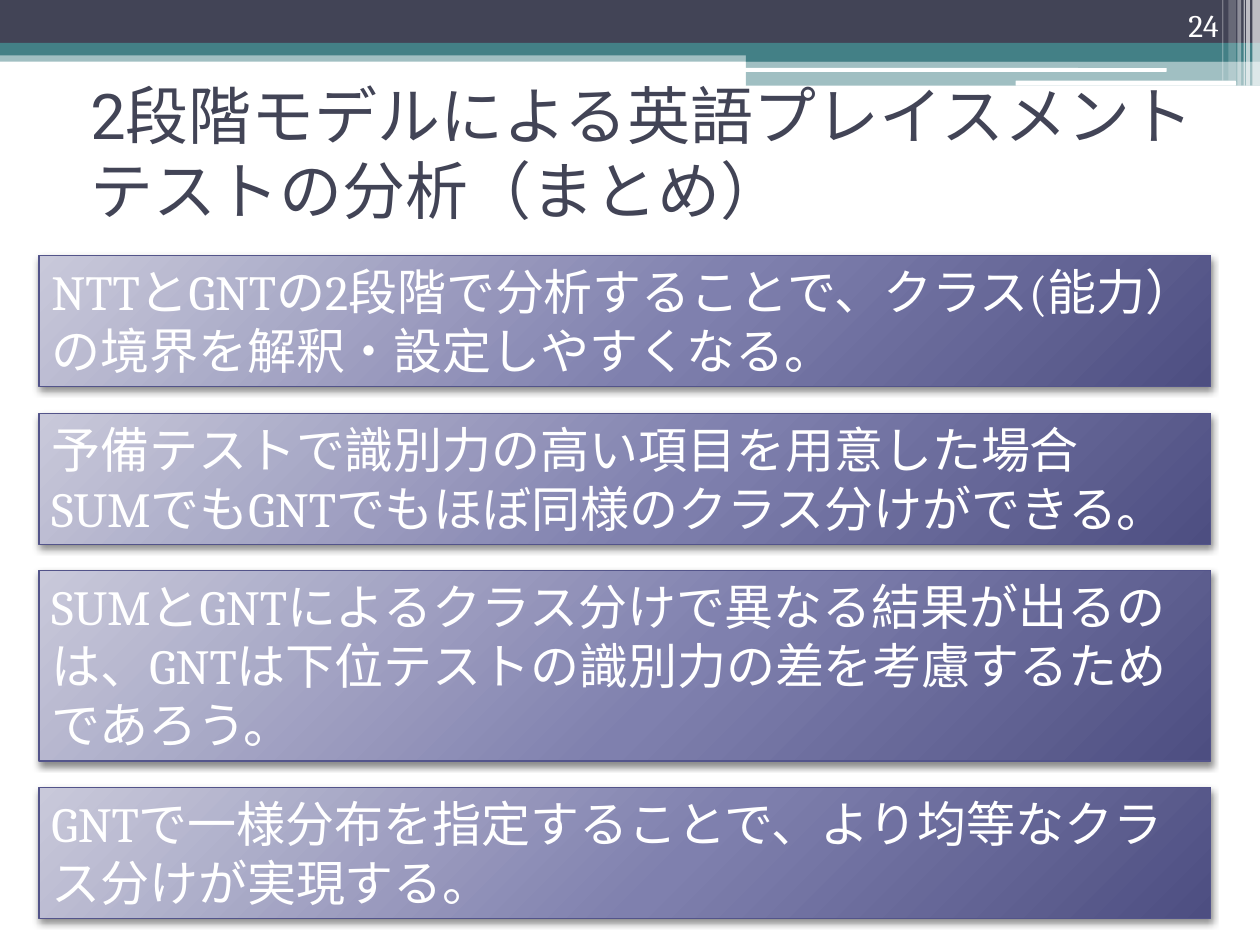
from pptx import Presentation
from pptx.dml.color import RGBColor
from pptx.enum.shapes import MSO_SHAPE
from pptx.enum.text import MSO_ANCHOR, MSO_AUTO_SIZE, PP_ALIGN
from pptx.oxml import parse_xml
from pptx.oxml.ns import nsdecls, qn
from pptx.util import Inches, Pt

RECTANGLE, ROUNDED = MSO_SHAPE.RECTANGLE, MSO_SHAPE.ROUNDED_RECTANGLE
LEFT, RIGHT = PP_ALIGN.LEFT, PP_ALIGN.RIGHT
TOP, MIDDLE, BOTTOM = MSO_ANCHOR.TOP, MSO_ANCHOR.MIDDLE, MSO_ANCHOR.BOTTOM
FIT_SHAPE = MSO_AUTO_SIZE.SHAPE_TO_FIT_TEXT

WHITE = RGBColor(0xFF, 0xFF, 0xFF)
SLATE = RGBColor(0x42, 0x44, 0x56)
TEAL = RGBColor(0x43, 0x80, 0x86)
INDIGO = RGBColor(0x53, 0x54, 0x8A)
BLACK = RGBColor(0, 0, 0)
GRADIENT = [
    (0, RGBColor(0xC9, 0xC9, 0xDA)),
    (55, RGBColor(0x7F, 0x80, 0xAE)),
    (100, RGBColor(0x4D, 0x4E, 0x81)),
]

TITLE_FORMAT = {"size": Pt(36), "name": "Roboto"}
NUMBER_FORMAT = {"size": Pt(18), "name": "Cambria"}
BODY_FORMAT = {"size": Pt(28), "name": "Cambria"}

# Each point: box height in inches and its paragraphs
POINTS = [
    (1.04, ["NTTとGNTの2段階で分析することで、クラス(能力）の境界を解釈・設定しやすくなる。"]),
    (1.04, ["予備テストで識別力の高い項目を用意した場合",
            "SUMでもGNTでもほぼ同様のクラス分けができる。"]),
    (1.51, ["SUMとGNTによるクラス分けで異なる結果が出るのは、"
            "GNTは下位テストの識別力の差を考慮するためであろう。"]),
    (1.04, ["GNTで一様分布を指定することで、より均等なクラス分けが実現する。"]),
]


def add_bar(slide, box, color, opacity=100, kind=RECTANGLE):
    bar = slide.shapes.add_shape(kind, *map(Inches, box))
    bar.shadow.inherit = False
    bar.fill.solid()
    bar.fill.fore_color.rgb = color
    bar.line.fill.background()
    if opacity < 100:
        color_element = bar.fill._xPr.find(".//" + qn("a:srgbClr"))
        color_element.append(parse_xml(
            f'<a:alpha {nsdecls("a")} val="{opacity * 1000}"/>'))
    return bar


def write_text(shape, lines, text_format, color, align=LEFT, anchor=TOP):
    frame = shape.text_frame
    frame.word_wrap = True
    frame.vertical_anchor = anchor
    for index, line in enumerate(lines):
        paragraph = frame.paragraphs[0] if index == 0 else frame.add_paragraph()
        paragraph.alignment = align
        run = paragraph.add_run()
        run.text = line
        run.font.color.rgb = color
        for attribute, value in text_format.items():
            setattr(run.font, attribute, value)


def add_text(slide, box, text, text_format, color, **layout):
    text_box = slide.shapes.add_textbox(*map(Inches, box))
    write_text(text_box, [text], text_format, color, **layout)


def add_header(slide, width):
    # Full-width bands
    add_bar(slide, (0, 0.4, width, 0.09), TEAL, 50)
    add_bar(slide, (0, 0, width, 0.34), SLATE)
    add_bar(slide, (0, 0.34, width, 0.1), TEAL)
    # Stepped bands on the right
    add_bar(slide, (5.92, 0.39, width - 5.92, 0.1), TEAL)
    add_bar(slide, (5.92, 0.48, width - 5.92, 0.2), TEAL, 50)
    for box in [(5.91, 0.54, 3.35, 0.03), (8.06, 0.64, 1.75, 0.04)]:
        add_bar(slide, box, WHITE, kind=ROUNDED)
    # Translucent vertical stripes: left, width, height, opacity
    for left, stripe_width, height, opacity in [
        (9.94, 0.06, 0.68, 65), (9.89, 0.03, 0.68, 65), (9.87, 0.01, 0.68, 60),
        (9.82, 0.03, 0.68, 40), (9.75, 0.06, 0.64, 20), (9.7, 0.01, 0.64, 30),
    ]:
        add_bar(slide, (left, 0, stripe_width, height), WHITE, opacity)


def add_point(slide, box, lines):
    panel = slide.shapes.add_shape(RECTANGLE, *map(Inches, box))
    properties = panel._element.spPr
    # Radial gradient centred beyond the top left corner
    stops = "".join(
        f'<a:gs pos="{position * 1000}"><a:srgbClr val="{color}"/></a:gs>'
        for position, color in GRADIENT)
    properties.find(qn("a:prstGeom")).addnext(parse_xml(
        f'<a:gradFill {nsdecls("a")} rotWithShape="1"><a:gsLst>{stops}</a:gsLst>'
        '<a:path path="circle"><a:fillToRect l="-40000" t="-90000" '
        'r="140000" b="190000"/></a:path></a:gradFill>'))
    panel.line.color.rgb = INDIGO
    panel.line.width = Pt(0.75)
    # Soft shadow straight below
    panel.shadow.inherit = False
    properties.find(qn("a:effectLst")).append(parse_xml(
        f'<a:outerShdw {nsdecls("a")} blurRad="{Pt(4)}" dist="{Pt(2)}" '
        f'dir="5400000" rotWithShape="0"><a:srgbClr val="{BLACK}">'
        '<a:alpha val="45000"/></a:srgbClr></a:outerShdw>'))
    write_text(panel, lines, BODY_FORMAT, WHITE)
    panel.text_frame.auto_size = FIT_SHAPE


def add_points(slide, left, top, width, gap):
    for height, lines in POINTS:
        add_point(slide, (left, top, width, height), lines)
        top += height + gap


def main():
    presentation = Presentation()
    presentation.slide_width, presentation.slide_height = Inches(10), Inches(7.5)
    slide = presentation.slides.add_slide(presentation.slide_layouts[6])
    add_header(slide, 10)
    add_text(slide, (0.62, 0.62, 9, 1.17),
             "2段階モデルによる英語プレイスメントテストの分析（まとめ）",
             TITLE_FORMAT, SLATE, anchor=MIDDLE)
    add_text(slide, (8.94, 0, 0.83, 0.4), "24", NUMBER_FORMAT, WHITE,
             align=RIGHT, anchor=BOTTOM)
    add_points(slide, left=0.31, top=2.03, width=9.3, gap=0.21)
    presentation.save("out.pptx")


if __name__ == "__main__":
    main()
